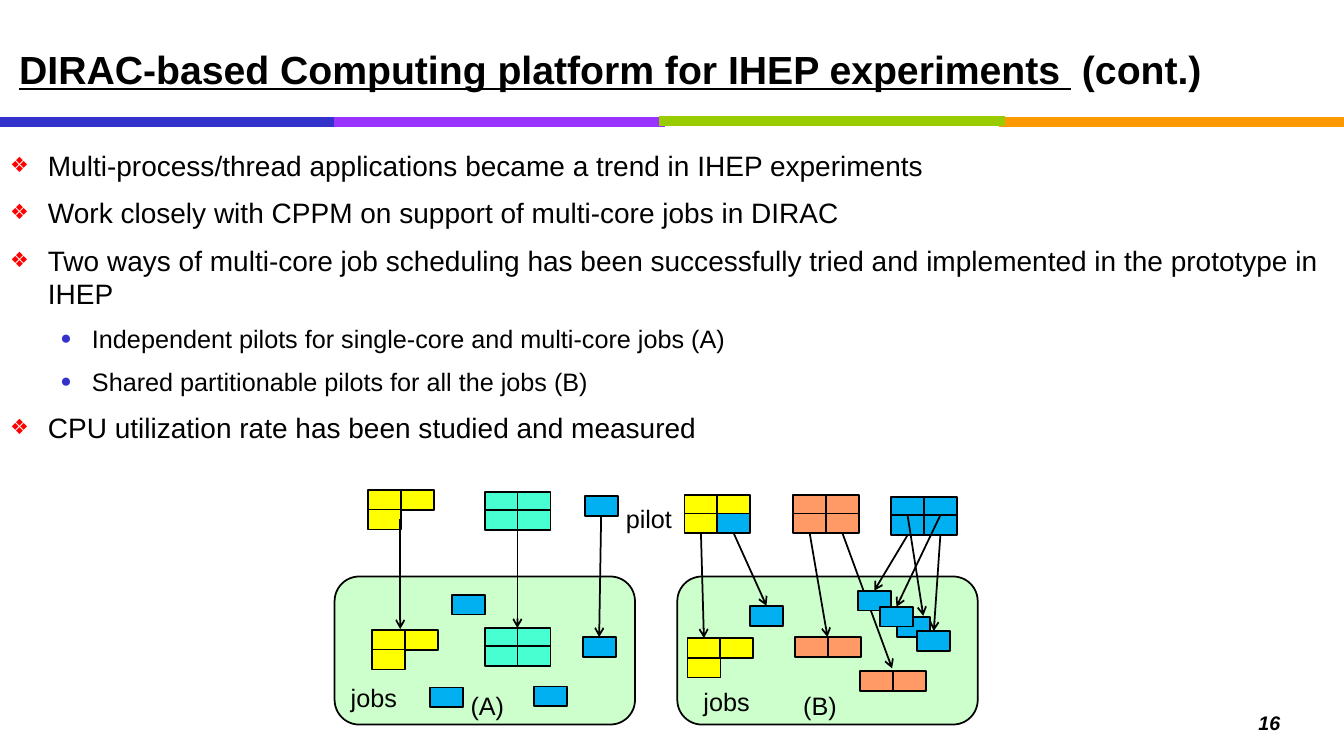
from lxml import etree
from pptx import Presentation
from pptx import util as u
from pptx.dml.color import RGBColor
from pptx.enum import shapes, text
from pptx.oxml import ns

Pt = u.Pt

TITLE = [("DIRAC-based Computing platform for IHEP experiments ", True), (" (cont.)", False)]
BULLETS = [
    (0, "Multi-process/thread applications became a trend in IHEP experiments"),
    (0, "Work closely with CPPM on support of multi-core jobs in DIRAC"),
    (0, "Two ways of multi-core job scheduling has been successfully tried "
        "and implemented in the prototype in IHEP"),
    (1, "Independent pilots for single-core and multi-core jobs (A)"),
    (1, "Shared partitionable pilots for all the jobs (B)"),
    (0, "CPU utilization rate has been studied and measured"),
]
SLIDE_NUMBER = "16"
HEADER_RULE = [
    ("purple", 236.2, 475.2, 87.1),
    ("orange", 713.5, 959.8, 87.1),
    ("green", 470.9, 717.8, 86.4),
    ("blue", -0.7, 238.3, 87.1),
]
PANELS = [(239, 411.8), (483.8, 411.8)]
LABELS = [
    ("jobs", 243.4, 483.8), ("jobs", 495.4, 486.7), ("pilot", 439.9, 355.7),
    ("(A)", 329, 489.6), ("(B)", 566.6, 489.6),
]

BLOCKS = {
    "yellow job A": (265.7, 450, 14, ["YY", "Y"]),
    "cyan job A": (346.3, 448.6, 13, ["CC", "CC"]),
    "single job A": (416.2, 455, 13, ["B"]),
    "yellow pilot A": (262.8, 350, 14, ["YY", "Y"]),
    "cyan pilot A": (346.3, 351.4, 13, ["CC", "CC"]),
    "single pilot A": (417.6, 354.2, 13, ["B"]),
    "waiting job 1": (307.4, 491, 13, ["B"]),
    "waiting job 2": (381.6, 490.3, 13, ["B"]),
    "waiting job 3": (322.6, 424.8, 13, ["B"]),
    "yellow job B": (491, 455.8, 14, ["YY", "Y"]),
    "mixed pilot B": (488.9, 353.8, 13, ["YY", "YB"]),
    "orange pilot B": (566.6, 353.8, 13, ["OO", "OO"]),
    "mixed single job B": (535.7, 432.7, 13, ["B"]),
    "third job B": (640.8, 440.6, 13, ["B"]),
    "orange job B1": (568.1, 455, 13, ["OO"]),
    "orange job B2": (614.2, 479.5, 13, ["OO"]),
}
FRONT_BLOCKS = {
    "blue pilot B": (636.5, 355, 13, ["BB", "BB"]),
    "first job B": (612.7, 421.9, 13, ["B"]),
    "second job B": (628.6, 433.4, 13, ["B"]),
    "fourth job B": (655.2, 450.7, 13, ["B"]),
}
TOP, BOTTOM = 0, 2
ARROWS = [
    ((285.9, 370.8), (285.9, 449.3)),
    ((369.6, 377.3), (369.6, 448.6)),
    (("single pilot A", 0, 0, BOTTOM), ("single job A", 0, 0, TOP)),
    (("mixed pilot B", 1, 1, BOTTOM), ("mixed single job B", 0, 0, TOP)),
    (("mixed pilot B", 1, 0, BOTTOM), ("yellow job B", 0, 0, TOP)),
    (("orange pilot B", 1, 0, BOTTOM), (591.1, 455)),
    (("orange pilot B", 1, 1, BOTTOM), (637.2, 477.4)),
]
FRONT_ARROWS = [
    (("blue pilot B", 1, 0, BOTTOM), ("first job B", 0, 0, TOP)),
    (("blue pilot B", 1, 1, BOTTOM), ("fourth job B", 0, 0, TOP)),
    (("blue pilot B", 1, 0, TOP), (659.5, 439.9)),
    (("blue pilot B", 1, 1, TOP), ("second job B", 0, 0, TOP)),
]

THEME = {
    "font": "Arial", "black": "000000", "white": "FFFFFF", "panel": "CCFFCC",
    "purple": "9933FF", "orange": "FF9900", "green": "99CC00", "blue": "3333CC",
    "Y": "FFFF00", "C": "47FFD1", "B": "00B0F0", "O": "FF9966",
    "title": 28, "levels": [20, 18], "label": 18, "number": 14,
    "outline": 1.25, "rule": 7,
    "bullets": [("❖", "FF0000", 27, -27), ("●", "3333CC", 58.5, -22.5)],
}
CELL_WIDTH, CELL_HEIGHT, CELL_PITCH = 23.6, 14.2, 23.4


def color(name):
    return RGBColor.from_string(THEME[name])


def apply(target, **values):
    for name, value in values.items():
        setattr(target, name, value)


def place(shape, left, top, width, height):
    apply(shape, left=Pt(left), top=Pt(top), width=Pt(width), height=Pt(height))


def add_run(paragraph, words, size, **values):
    run = paragraph.add_run()
    run.text = words
    apply(run.font, name=THEME["font"], size=Pt(size), **values)
    run.font.color.rgb = color("black")


def add_text(slide, words, box, size, align=text.PP_ALIGN.LEFT, **values):
    frame = slide.shapes.add_textbox(*map(Pt, box)).text_frame
    frame.word_wrap = True
    frame.paragraphs[0].alignment = align
    add_run(frame.paragraphs[0], words, size, **values)


def add_box(slide, kind, fill, *box):
    shape = slide.shapes.add_shape(kind, *map(Pt, box))
    shape.shadow.inherit = False
    shape.fill.solid()
    shape.fill.fore_color.rgb = color(fill)
    shape.line.color.rgb = color("black")
    shape.line.width = Pt(THEME["outline"])
    return shape


def add_line(slide, start, end, name, width, arrow=False):
    line = slide.shapes.add_connector(
        shapes.MSO_CONNECTOR.STRAIGHT, *map(Pt, (*start, *end)))
    line.line.color.rgb = color(name)
    line.line.width = Pt(width)
    properties = line.element.spPr
    if arrow:
        etree.SubElement(properties.find(ns.qn("a:ln")), ns.qn("a:tailEnd"), type="arrow")
    etree.SubElement(properties, ns.qn("a:effectLst"))
    return line


def add_blocks(slide, blocks, cells):
    for name, (left, top, row_pitch, rows) in blocks.items():
        for column in range(len(rows[0])):
            for row, fills in enumerate(rows):
                if column < len(fills):
                    cells[name, row, column] = add_box(
                        slide, shapes.MSO_SHAPE.RECTANGLE, fills[column],
                        left + column * CELL_PITCH, top + row * row_pitch,
                        CELL_WIDTH, CELL_HEIGHT)


def add_arrows(slide, arrows, cells):
    for ends in arrows:
        points = [end if len(end) == 2 else (0, 0) for end in ends]
        line = add_line(slide, *points, "black", THEME["outline"], True)
        for end, connect in zip(ends, (line.begin_connect, line.end_connect)):
            if len(end) == 4:
                connect(cells[end[:3]], end[3])


def format_bullet(paragraph, level):
    character, tint, margin, indent = THEME["bullets"][level]
    properties = paragraph._p.get_or_add_pPr()
    properties.set("marL", str(Pt(margin)))
    properties.set("indent", str(Pt(indent)))
    spacing = etree.SubElement(properties, ns.qn("a:spcBef"))
    etree.SubElement(spacing, ns.qn("a:spcPct"), val="50000")
    bullet_color = etree.SubElement(properties, ns.qn("a:buClr"))
    etree.SubElement(bullet_color, ns.qn("a:srgbClr"), val=tint)
    etree.SubElement(properties, ns.qn("a:buSzPct"), val="75000")
    etree.SubElement(properties, ns.qn("a:buFont"), typeface=THEME["font"])
    etree.SubElement(properties, ns.qn("a:buChar"), char=character)


def fill_title(title):
    place(title, 6.5, 18, 924.5, 51.8)
    apply(title.text_frame, vertical_anchor=text.MSO_ANCHOR.BOTTOM,
          auto_size=text.MSO_AUTO_SIZE.NONE, word_wrap=True)
    paragraph = title.text_frame.paragraphs[0]
    apply(paragraph, alignment=text.PP_ALIGN.LEFT, line_spacing=1.5)
    for words, underline in TITLE:
        add_run(paragraph, words, THEME["title"], bold=True, underline=underline)


def fill_body(body):
    place(body, 0, 102.2, 960, 221.8)
    body.fill.solid()
    body.fill.fore_color.rgb = color("white")
    frame = body.text_frame
    apply(frame, auto_size=text.MSO_AUTO_SIZE.NONE, word_wrap=True)
    for index, (level, words) in enumerate(BULLETS):
        paragraph = frame.add_paragraph() if index else frame.paragraphs[0]
        paragraph.level = level
        format_bullet(paragraph, level)
        add_run(paragraph, words, THEME["levels"][level])


def main():
    presentation = Presentation()
    apply(presentation, slide_width=Pt(960), slide_height=Pt(540))
    slide = presentation.slides.add_slide(presentation.slide_layouts[1])
    fill_title(slide.shapes.title)
    fill_body(slide.placeholders[1])
    for name, start, end, height in HEADER_RULE:
        add_line(slide, (start, height), (end, height), name, THEME["rule"])
    add_text(slide, SLIDE_NUMBER, (721.4, 504, 200.2, 30.2), THEME["number"],
             text.PP_ALIGN.RIGHT, bold=True, italic=True)
    for left, top in PANELS:
        add_box(slide, shapes.MSO_SHAPE.ROUNDED_RECTANGLE, "panel", left, top, 214.6, 105.8)
    cells = {}
    for blocks, arrows in ((BLOCKS, ARROWS), (FRONT_BLOCKS, FRONT_ARROWS)):
        add_blocks(slide, blocks, cells)
        add_arrows(slide, arrows, cells)
    for words, left, top in LABELS:
        add_text(slide, words, (left, top, 58.3, 28.8), THEME["label"])
    presentation.save("out.pptx")


if __name__ == "__main__":
    main()
